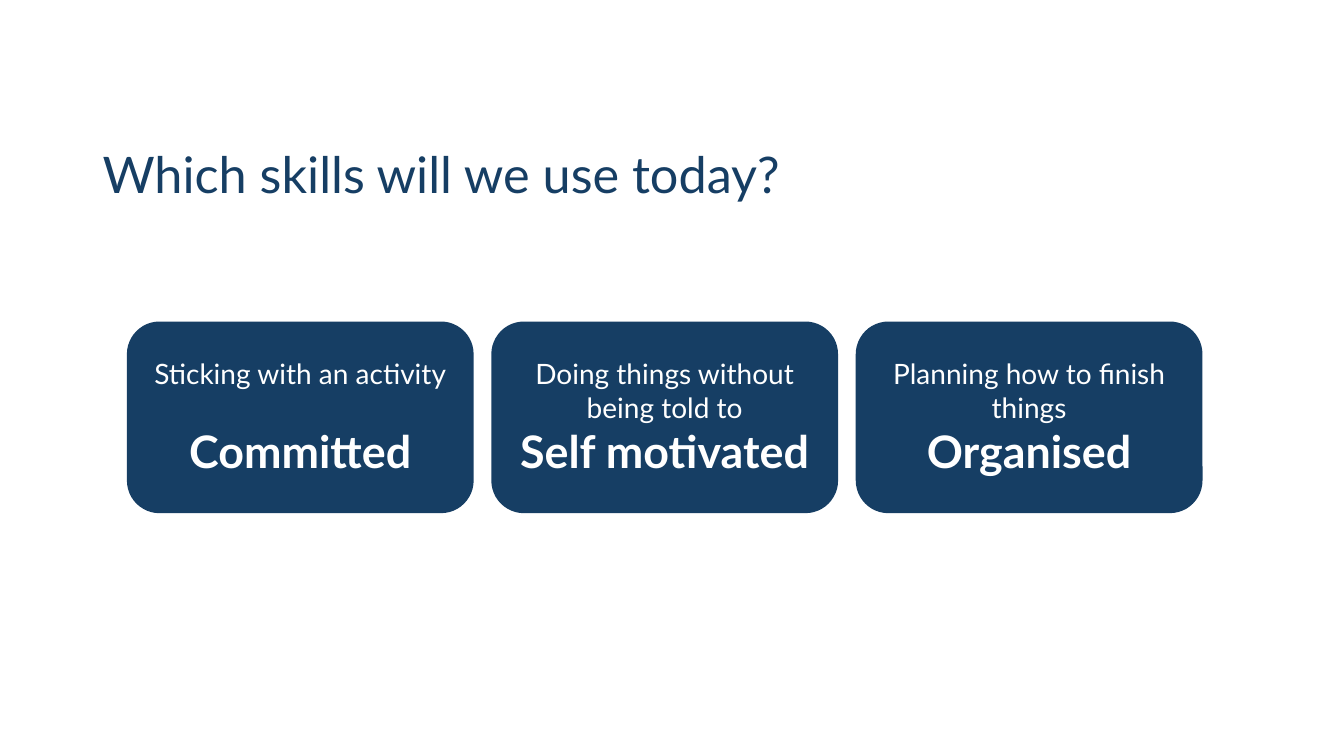
"""Build a slide that names three skills on a row of cards."""
import pptx
import pptx.dml.color
import pptx.enum.shapes
import pptx.enum.text
import pptx.util

Pt = pptx.util.Pt
ALIGN = pptx.enum.text.PP_ALIGN
NAVY = pptx.dml.color.RGBColor(0x16, 0x3E, 0x64)
WHITE = pptx.dml.color.RGBColor(0xFF, 0xFF, 0xFF)
FONT = "Lato"

HEADING = "Which skills will we use today?"
SKILLS = [
    {"meaning": "Sticking with an activity", "skill": "Committed", "gap": 24},
    {"meaning": "Doing things without being told to", "skill": "Self motivated", "gap": 0},
    {"meaning": "Planning how to finish things", "skill": "Organised", "gap": 0},
]

SLIDE_WIDTH, SLIDE_HEIGHT = 960, 540
CARD_LEFT, CARD_TOP = 91.4, 230.4
CARD_WIDTH, CARD_HEIGHT = 246.2, 135.4
CARD_STEP = 260.3


def write(paragraph, text, *, size, color, bold=False, align=ALIGN.LEFT, gap=0, spacing=1.0):
    paragraph.text = text
    paragraph.alignment = align
    paragraph.line_spacing = spacing
    if gap:
        paragraph.space_before = Pt(gap)
    font = paragraph.runs[0].font
    font.name = FONT
    font.size = Pt(size)
    font.bold = bold
    font.color.rgb = color


def add_heading(slide):
    heading = slide.shapes.add_textbox(Pt(66.2), Pt(93.6), Pt(828), Pt(66.2))
    frame = heading.text_frame
    frame.word_wrap = True
    frame.vertical_anchor = pptx.enum.text.MSO_ANCHOR.MIDDLE
    write(frame.paragraphs[0], HEADING, size=36, color=NAVY, spacing=0.9)


def add_card(slide, column, entry):
    card = slide.shapes.add_shape(
        pptx.enum.shapes.MSO_SHAPE.ROUNDED_RECTANGLE,
        Pt(CARD_LEFT + column * CARD_STEP), Pt(CARD_TOP), Pt(CARD_WIDTH), Pt(CARD_HEIGHT))
    card.shadow.inherit = False
    card.fill.solid()
    card.fill.fore_color.rgb = NAVY
    card.line.color.rgb = NAVY
    card.line.width = Pt(1.5)
    frame = card.text_frame
    frame.word_wrap = True
    frame.vertical_anchor = pptx.enum.text.MSO_ANCHOR.MIDDLE
    write(frame.paragraphs[0], entry["meaning"], size=20, color=WHITE, align=ALIGN.CENTER)
    write(frame.add_paragraph(), entry["skill"], size=32, color=WHITE, bold=True,
          align=ALIGN.CENTER, gap=entry["gap"])


def main():
    deck = pptx.Presentation()
    deck.slide_width, deck.slide_height = Pt(SLIDE_WIDTH), Pt(SLIDE_HEIGHT)
    slide = deck.slides.add_slide(deck.slide_layouts[6])
    add_heading(slide)
    for column, entry in enumerate(SKILLS):
        add_card(slide, column, entry)
    deck.save("out.pptx")


if __name__ == "__main__":
    main()
